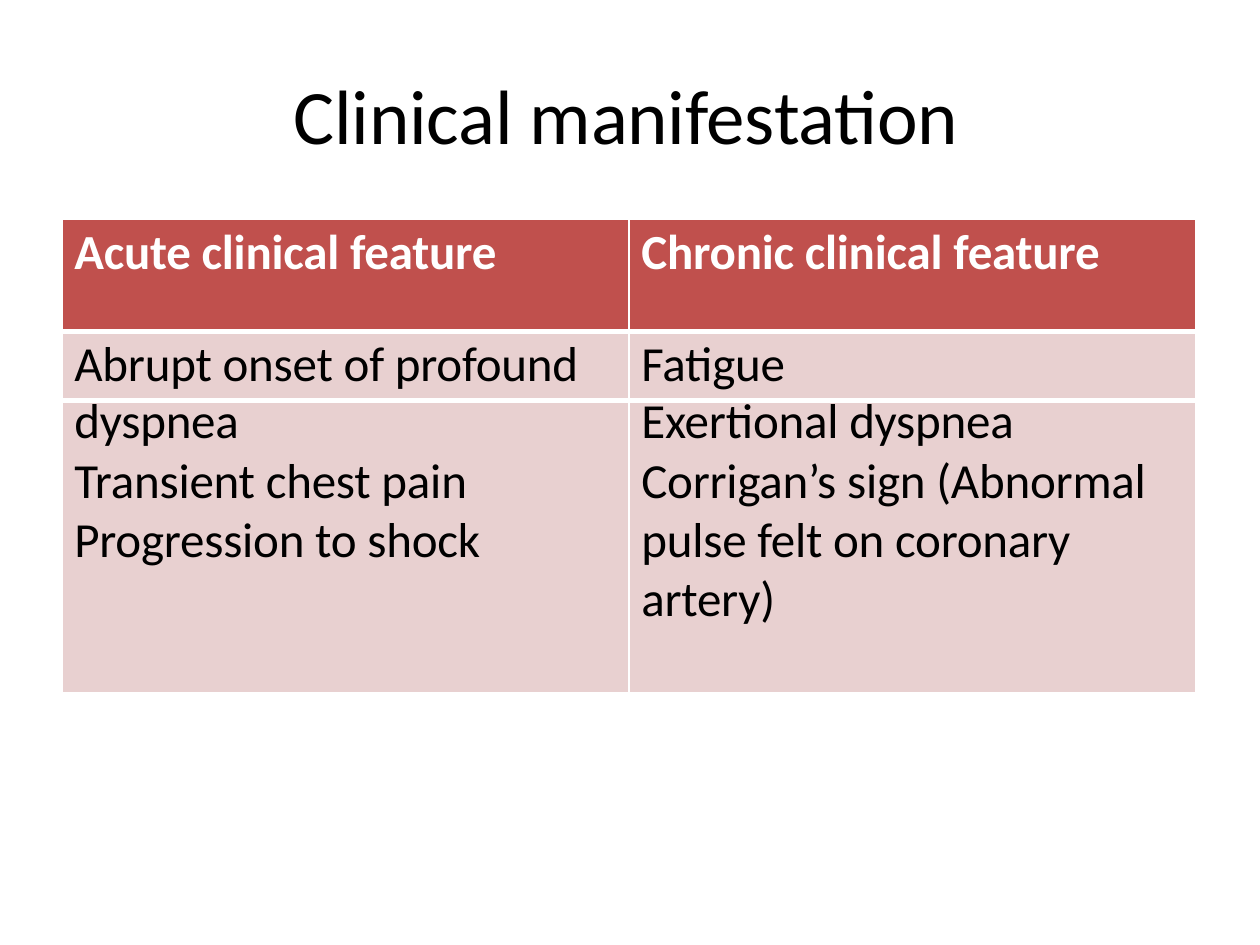
from pptx import Presentation
from pptx.dml.color import RGBColor as RGB
from pptx.enum.text import MSO_ANCHOR as Anchor
from pptx.oxml.ns import qn
from pptx.util import Inches, Pt
from lxml.etree import SubElement

# Content
TITLE = "Clinical manifestation"
ROWS = [
    ("Acute clinical feature", "Chronic clinical feature"),
    ("Abrupt onset of profound", "Fatigue"),
    ("dyspnea", "Exertional dyspnea"),
    ("Transient chest pain", "Corrigan’s sign (Abnormal"),
    ("Progression to shock", "pulse felt on coronary"),
    ("", "artery)"),
]
ROW_HEIGHTS = [0.89, 0.55, 0.47, 0.47, 0.47, 0.91]
COLUMN_WIDTH = 4.5

THEME = {
    "font": "Calibri", "title_size": 44, "cell_size": 28, "line_spacing": 29.4,
    "text": "000000", "header_text": "FFFFFF", "rule": "FFFFFF",
    "header_fill": "C0504D", "body_fill": "E8D0D0",
}
# Rule widths in points above each row, then below the last one
RULES = [1, 3, 3, 0, 0, 0, 1]


def write(frame, text, size, color, bold=False, spacing=-10):
    paragraph = frame.paragraphs[0]
    run = paragraph.add_run()
    run.text = text
    for name, value in {"name": THEME["font"], "size": Pt(size), "bold": bold}.items():
        setattr(run.font, name, value)
    run.font.color.rgb = RGB.from_string(color)
    run._r.get_or_add_rPr().set("spc", str(spacing))
    return paragraph


def set_borders(cell, top, bottom):
    properties = cell._tc.get_or_add_tcPr()
    for side, width in {"L": 1, "R": 1, "T": top, "B": bottom}.items():
        line = SubElement(properties, qn(f"a:ln{side}"), w=str(Pt(width)))
        if width:
            fill = SubElement(line, qn("a:solidFill"))
            SubElement(fill, qn("a:srgbClr"), val=THEME["rule"])
        else:
            SubElement(line, qn("a:noFill"))


def set_margins(target, left, top):
    margins = {"margin_left": left, "margin_top": top, "margin_right": 0, "margin_bottom": 0}
    for name, value in margins.items():
        setattr(target, name, Inches(value))


def add_title(slide):
    box = slide.shapes.add_textbox(Inches(2.32), Inches(0.51), Inches(6.26), Inches(0.76))
    frame = box.text_frame
    frame.word_wrap = True
    set_margins(frame, 0.01, 0.03)
    write(frame, TITLE, THEME["title_size"], THEME["text"], spacing=-15)


def add_features(slide):
    table = slide.shapes.add_table(
        len(ROWS), 2, Inches(0.49), Inches(1.74),
        Inches(2 * COLUMN_WIDTH), Inches(sum(ROW_HEIGHTS))).table
    table.horz_banding = False
    for column in table.columns:
        column.width = Inches(COLUMN_WIDTH)
    for index, (texts, height) in enumerate(zip(ROWS, ROW_HEIGHTS)):
        table.rows[index].height = Inches(height)
        header, continued = index == 0, index > 1
        for cell, text in zip(table.rows[index].cells, texts):
            set_borders(cell, RULES[index], RULES[index + 1])
            cell.fill.solid()
            cell.fill.fore_color.rgb = RGB.from_string(
                THEME["header_fill" if header else "body_fill"])
            cell.vertical_anchor = Anchor.TOP
            set_margins(cell, 0.1, 0 if continued else 0.03)
            if text:
                paragraph = write(cell.text_frame, text, THEME["cell_size"],
                                  THEME["header_text" if header else "text"], header)
                if continued:
                    paragraph.line_spacing = Pt(THEME["line_spacing"])


def main():
    presentation = Presentation()
    presentation.slide_width, presentation.slide_height = Inches(10), Inches(7.5)
    slide = presentation.slides.add_slide(presentation.slide_layouts[6])
    add_title(slide)
    add_features(slide)
    presentation.save("out.pptx")


if __name__ == "__main__":
    main()
